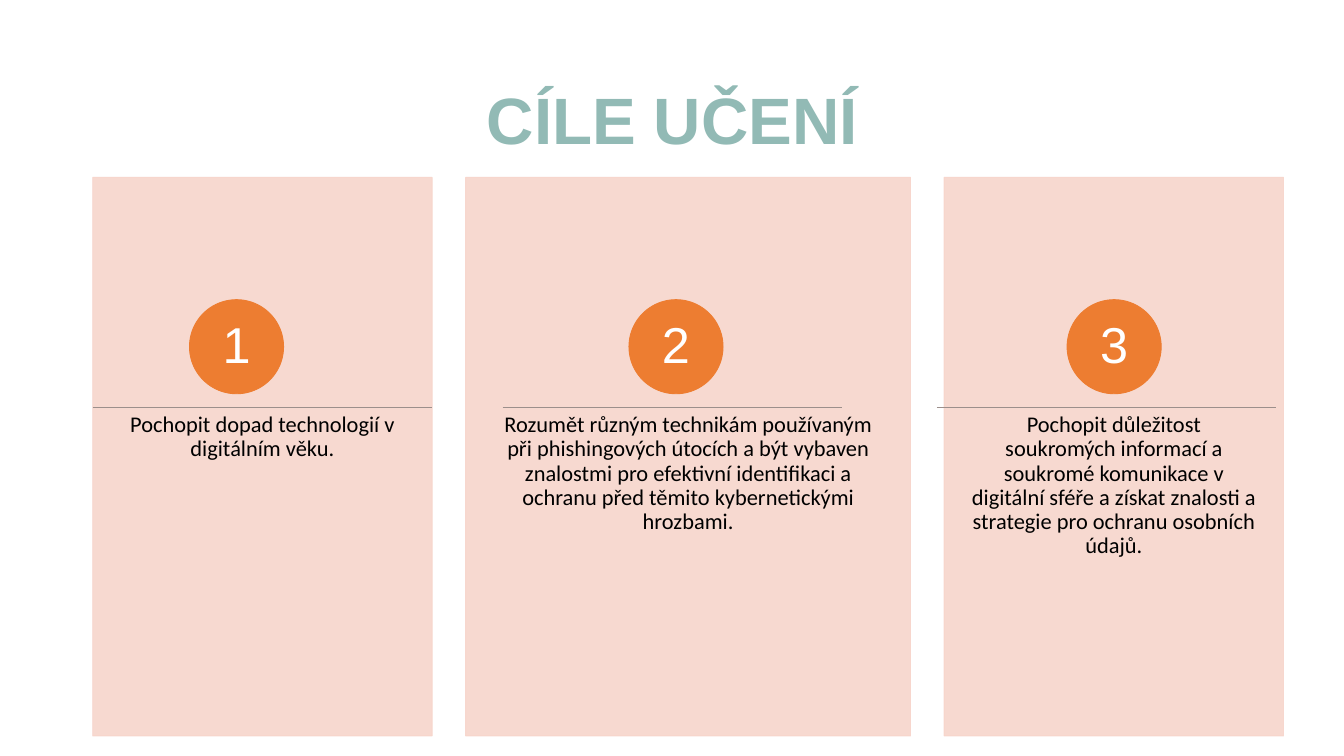
from lxml import etree
from pptx import Presentation
from pptx.dml.color import RGBColor
from pptx.enum.shapes import MSO_CONNECTOR, MSO_SHAPE
from pptx.enum.text import MSO_ANCHOR, PP_ALIGN
from pptx.oxml.ns import qn
from pptx.util import Inches, Pt

RECT, OVAL = MSO_SHAPE.RECTANGLE, MSO_SHAPE.OVAL
STRAIGHT = MSO_CONNECTOR.STRAIGHT
TOP, MIDDLE = MSO_ANCHOR.TOP, MSO_ANCHOR.MIDDLE
CENTER = PP_ALIGN.CENTER

TEAL = RGBColor(0x92, 0xBA, 0xB5)
PINK = RGBColor(0xF7, 0xD5, 0xCB)
ORANGE = RGBColor(0xED, 0x7D, 0x31)
GRAY = RGBColor(0x9C, 0x8F, 0x8B)
BLACK = RGBColor(0, 0, 0)
WHITE = RGBColor(0xFF, 0xFF, 0xFF)


def write(sp, text, size, font, color, anchor=MIDDLE, bold=False, inset=(0, 0)):
    """Put one centred paragraph in sp; inset is (sides, top and bottom) in inches."""
    tf = sp.text_frame
    tf.word_wrap = True
    tf.vertical_anchor = anchor
    tf.margin_left = tf.margin_right = Inches(inset[0])
    tf.margin_top = tf.margin_bottom = Inches(inset[1])
    p = tf.paragraphs[0]
    p.alignment = CENTER
    p.line_spacing = 0.9
    r = p.add_run()
    r.text = text
    r.font.size = Pt(size)
    r.font.name = font
    r.font.bold = bold
    r.font.color.rgb = color


def add_solid(kind, x, y, w, h, color, opacity=100):
    sp = s.shapes.add_shape(kind, Inches(x), Inches(y), Inches(w), Inches(h))
    sp.shadow.inherit = False
    sp.fill.solid()
    sp.fill.fore_color.rgb = color
    sp.line.color.rgb = color
    sp.line.width = Pt(1)
    if opacity < 100:
        for clr in sp._element.spPr.iter(qn("a:srgbClr")):
            etree.SubElement(clr, qn("a:alpha")).set("val", str(opacity * 1000))
    return sp


prs = Presentation()
prs.slide_width, prs.slide_height = Inches(20), Inches(11.25)
s = prs.slides.add_slide(prs.slide_layouts[6])

title = s.shapes.add_textbox(Inches(1.38), Inches(0.91), Inches(17.25), Inches(1.86))
write(title, "CÍLE UČENÍ", 70.2, "Arial", TEAL, bold=True, inset=(0.1, 0.05))

# panel left, panel width, circle left, rule left, text
goals = [
    (1.38, 5.05, 2.82, 1.38, "Pochopit dopad technologií v digitálním věku."),
    (6.93, 6.62, 9.36, 7.48,
     "Rozumět různým technikám používaným při phishingových útocích a být "
     "vybaven znalostmi pro efektivní identifikaci a ochranu před těmito "
     "kybernetickými hrozbami."),
    (14.05, 5.05, 15.88, 13.94,
     "Pochopit důležitost soukromých informací a soukromé komunikace v "
     "digitální sféře a získat znalosti a strategie pro ochranu osobních údajů."),
]
RULE_Y, RULE_W = 6.06, 5.05

for number, (x, w, circle_x, rule_x, text) in enumerate(goals, 1):
    add_solid(RECT, x, 2.64, w, 8.31, PINK, opacity=90)

    body = s.shapes.add_textbox(Inches(x), Inches(5.79), Inches(w), Inches(4.98))
    write(body, text, 24, "Calibri", BLACK, anchor=TOP, inset=(0.39, 0.36))

    circle = add_solid(OVAL, circle_x, 4.46, 1.4, 1.4, ORANGE)
    write(circle, str(number), 54, "Arial", WHITE)

    rule = s.shapes.add_connector(STRAIGHT, Inches(rule_x), Inches(RULE_Y),
                                  Inches(rule_x + RULE_W), Inches(RULE_Y))
    rule.line.color.rgb = GRAY
    rule.line.width = Pt(1)
    etree.SubElement(rule._element.spPr, qn("a:effectLst"))

prs.save("out.pptx")
